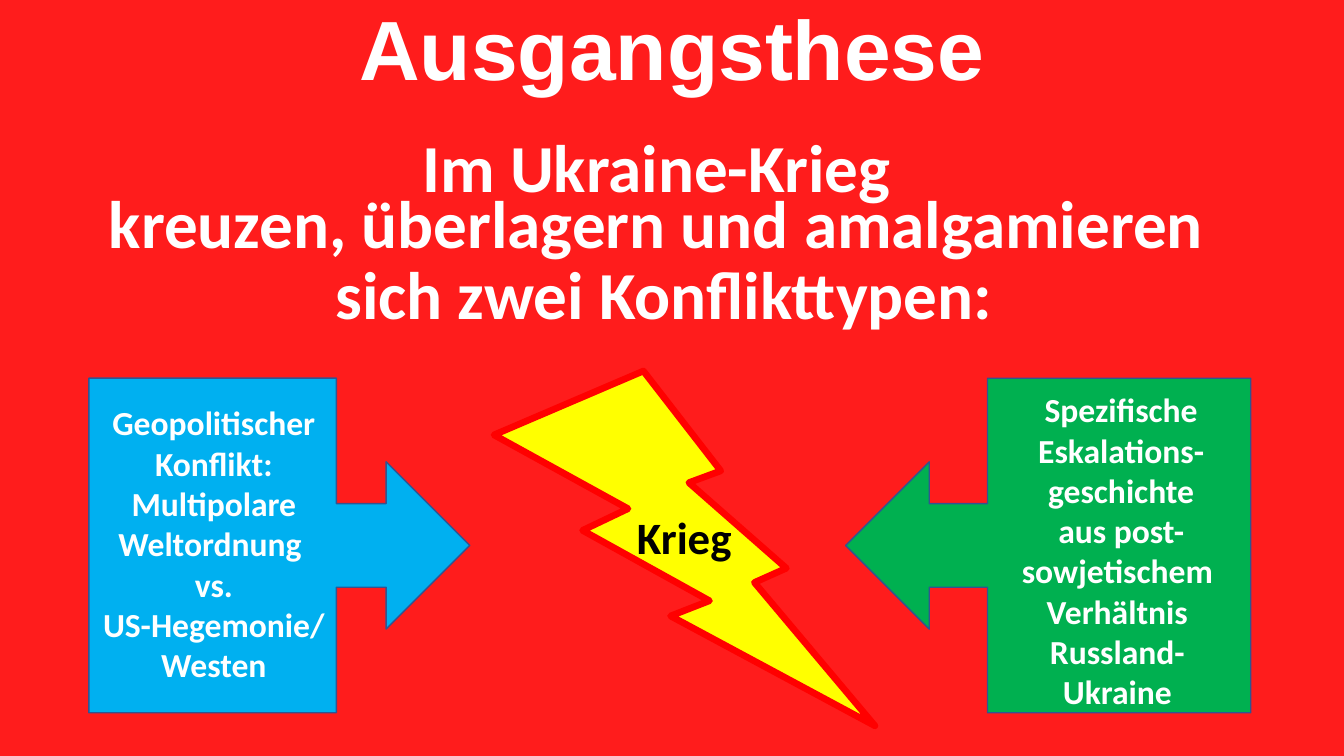
from pptx import Presentation
from pptx.dml.color import RGBColor
from pptx.enum.shapes import MSO_SHAPE
from pptx.enum.text import MSO_ANCHOR, PP_ALIGN
from pptx.util import Cm, Pt

WHITE, BLACK = "FFFFFF", "000000"
BACKGROUND = "FF1C1C"
CALLOUT_LINE = "325491"

# Each entry is a paragraph; "\n" is a line break within it.
TITLE = ["Ausgangsthese"]
THESIS = [
    "Im Ukraine-Krieg \nkreuzen, überlagern und amalgamieren ",
    "sich zwei Konflikttypen:",
]
CENTRE = ["Krieg"]

# Places are left, top, width, height in cm.
TITLE_PLACE = (2.33, -0.5, 29.21, 3.68)
THESIS_PLACE = (1.07, 3.58, 31.34, 5.33)
BOLT_PLACE = (12.45, 9.35, 9.6, 8.94)
CENTRE_PLACE = (15.8, 12.73, 2.9, 1.63)

CONFLICTS = [
    {
        "callout": (2.24, 9.53, 9.6, 8.43),
        "rotation": 0,
        "fill": "00B0F0",
        "label": (2.24, 10.01, 6.3, 7.44),
        "lines": ["Geopolitischer", "Konflikt:", "Multipolare",
                  "Weltordnung \nvs.", "US-Hegemonie/", "Westen"],
    },
    {
        "callout": (21.31, 9.53, 10.21, 8.43),
        "rotation": 180,
        "fill": "00B050",
        "label": (24.99, 9.68, 6.53, 8.46),
        "lines": ["Spezifische Eskalations-geschichte", "aus post-",
                  "sowjetischem ", "Verhältnis ", "Russland- \nUkraine "],
    },
]


def rgb(value):
    return RGBColor.from_string(value)


def write(frame, paragraphs, size, color=WHITE, font="Calibri",
          align=PP_ALIGN.CENTER, line_spacing=None, space_before=0):
    frame.word_wrap = True
    for index, text in enumerate(paragraphs):
        paragraph = frame.paragraphs[0] if index == 0 else frame.add_paragraph()
        paragraph.alignment = align
        paragraph.line_spacing = line_spacing
        paragraph.space_before = Pt(space_before)
        for number, line in enumerate(text.split("\n")):
            if number:
                paragraph.add_line_break()
            run = paragraph.add_run()
            run.text = line
            run.font.name = font
            run.font.size = Pt(size)
            run.font.bold = True
            run.font.color.rgb = rgb(color)


def add_text(slide, place, paragraphs, size, **style):
    box = slide.shapes.add_textbox(*map(Cm, place))
    write(box.text_frame, paragraphs, size, **style)


def add_figure(slide, kind, place, fill, line, line_width, rotation=0):
    figure = slide.shapes.add_shape(kind, *map(Cm, place))
    figure.rotation = rotation
    figure.shadow.inherit = False
    figure.fill.solid()
    figure.fill.fore_color.rgb = rgb(fill)
    figure.line.color.rgb = rgb(line)
    figure.line.width = Pt(line_width)


def main():
    deck = Presentation()
    deck.slide_width, deck.slide_height = Cm(33.87), Cm(19.05)
    slide = deck.slides.add_slide(deck.slide_layouts.get_by_name("Title Only"))
    slide.background.fill.solid()
    slide.background.fill.fore_color.rgb = rgb(BACKGROUND)

    title = slide.shapes.title
    title.left, title.top, title.width, title.height = map(Cm, TITLE_PLACE)
    title.text_frame.vertical_anchor = MSO_ANCHOR.MIDDLE
    write(title.text_frame, TITLE, 60, font="Arial", line_spacing=0.9)

    add_text(slide, THESIS_PLACE, THESIS, 48, line_spacing=0.7, space_before=10)

    for conflict in CONFLICTS:
        add_figure(slide, MSO_SHAPE.RIGHT_ARROW_CALLOUT, conflict["callout"],
                   conflict["fill"], CALLOUT_LINE, 1, conflict["rotation"])
        add_text(slide, conflict["label"], conflict["lines"], 24)

    add_figure(slide, MSO_SHAPE.LIGHTNING_BOLT, BOLT_PLACE, "FFFF00", "FF0000", 4.75)
    add_text(slide, CENTRE_PLACE, CENTRE, 32, color=BLACK, align=PP_ALIGN.LEFT)

    deck.save("out.pptx")


if __name__ == "__main__":
    main()
